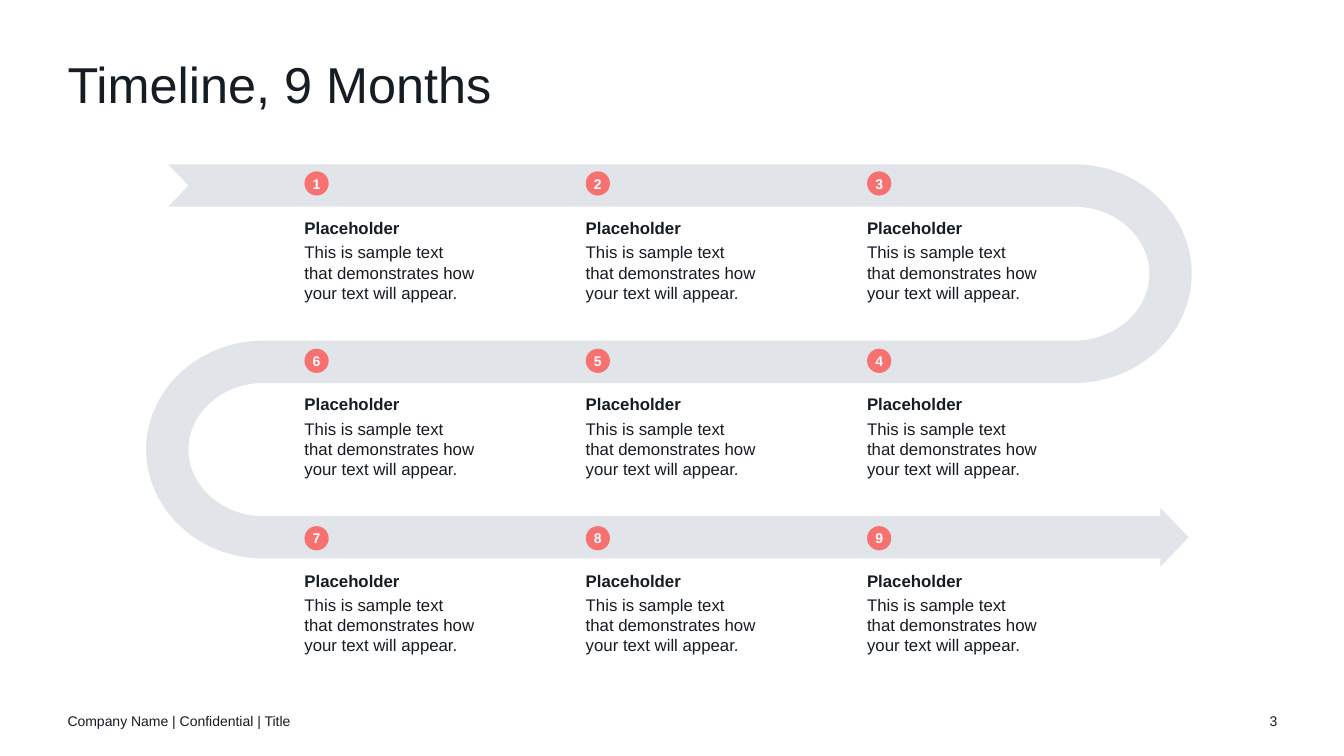
from pptx import Presentation
from pptx.dml.color import RGBColor
from pptx.enum.shapes import MSO_SHAPE as Shape
from pptx.enum.text import MSO_ANCHOR as Anchor, MSO_AUTO_SIZE as AutoSize, PP_ALIGN as Align
from pptx.oxml.ns import qn
from pptx.util import Inches, Pt

INK = RGBColor(0x15, 0x1C, 0x23)
ROAD = RGBColor(0xE1, 0xE4, 0xE9)
CORAL = RGBColor(0xF8, 0x71, 0x71)
WHITE = RGBColor(0xFF, 0xFF, 0xFF)

FONT = "Arial"
SAMPLE = "This is sample text that demonstrates how your text will appear."
ROWS = COLUMNS = 3
ROUND = 0.55


def place(box, left, top, width, height):
    box.left, box.top = Inches(left), Inches(top)
    box.width, box.height = Inches(width), Inches(height)


def prepare_frame(box, anchor=Anchor.TOP):
    frame = box.text_frame
    frame.word_wrap = True
    frame.vertical_anchor = anchor
    frame.margin_left = frame.margin_right = 0
    frame.margin_top = frame.margin_bottom = 0
    return frame


def write(para, text, size, color=INK, bold=False, align=Align.LEFT):
    para.text = text
    para.alignment = align
    font = para.runs[0].font
    font.name, font.size, font.bold = FONT, Pt(size), bold
    font.color.rgb = color


def set_title(page, text):
    title = page.shapes.title
    place(title, 0.67, 0.59, 12, 0.6)
    para = prepare_frame(title).paragraphs[0]
    write(para, text, 36)
    para.line_spacing = 0.9


def add_footer(page, text, left, width, align):
    box = page.shapes.add_textbox(Inches(left), Inches(6.95), Inches(width), Inches(0.4))
    write(prepare_frame(box, Anchor.MIDDLE).paragraphs[0], text, 10, align=align)


def turn(base, tip, start, end):
    middle = (start + end) / 2
    reach = base + (tip - base) * ROUND
    rise = (middle - start) * ROUND
    return [
        [(reach, start), (tip, middle - rise), (tip, middle)],
        [(tip, middle + rise), (reach, end), (base, end)],
    ]


def draw_outline(page, start, segments):
    builder = page.shapes.build_freeform(Inches(start[0]), Inches(start[1]))
    for segment in segments:
        builder.add_line_segments([(Inches(x), Inches(y)) for x, y in segment], close=False)
    builder.add_line_segments([], close=True)
    outline = builder.convert_to_shape()
    lines = iter(outline._element.findall(".//" + qn("a:lnTo")))
    for segment in segments:
        first, *others = [next(lines) for _ in segment]
        if others:
            first.tag = qn("a:cubicBezTo")
        for line in others:
            first.append(line[0])
            line.getparent().remove(line)
    return outline


def add_road(page):
    first, second, third = 1.84, 3.59, 5.33
    half, wing = 0.21, 0.29
    right, left = 10.65, 2.61
    neck, tip = 11.51, 11.79
    head = [(neck, third - half), (neck, third - wing), (tip, third),
            (neck, third + wing), (neck, third + half), (left, third + half)]
    segments = [
        [(right, first - half)],
        *turn(right, 11.82, first - half, second + half),
        [(left, second + half)],
        *turn(left, 1.87, second + half, third - half),
        *[[point] for point in head],
        *turn(left, 1.45, third + half, second - half),
        [(right, second - half)],
        *turn(right, 11.4, second - half, first + half),
        [(1.67, first + half)],
        [(1.87, first)],
    ]
    road = draw_outline(page, (1.67, first - half), segments)
    road.shadow.inherit = False
    road.fill.solid()
    road.fill.fore_color.rgb = ROAD
    road.line.fill.background()


def add_description(page, left, top):
    box = page.shapes.add_textbox(Inches(left), Inches(top), Inches(1.7), Inches(0.85))
    frame = prepare_frame(box)
    frame.auto_size = AutoSize.SHAPE_TO_FIT_TEXT
    write(frame.paragraphs[0], "Placeholder", 12, bold=True)
    write(frame.add_paragraph(), SAMPLE, 12)
    for para in frame.paragraphs:
        para.space_after = Pt(3)


def add_marker(page, number, left, top):
    marker = page.shapes.add_shape(
        Shape.OVAL, Inches(left), Inches(top), Inches(0.24), Inches(0.24))
    marker.shadow.inherit = False
    marker.fill.solid()
    marker.fill.fore_color.rgb = CORAL
    marker.line.fill.background()
    frame = prepare_frame(marker, Anchor.MIDDLE)
    write(frame.paragraphs[0], str(number), 10, WHITE, True, Align.CENTER)


def add_months(page):
    for month in range(ROWS * COLUMNS):
        row, step = divmod(month, COLUMNS)
        column = COLUMNS - 1 - step if row % 2 else step
        left = 3.02 + 2.79 * column
        add_description(page, left, 2.16 + 1.75 * row)
        add_marker(page, month + 1, left, 1.7 + 1.76 * row)


def main():
    deck = Presentation()
    deck.slide_width, deck.slide_height = Inches(13.33), Inches(7.5)
    page = deck.slides.add_slide(deck.slide_layouts[5])
    set_title(page, "Timeline, 9 Months")
    add_road(page)
    add_months(page)
    add_footer(page, "Company Name | Confidential | Title", 0.67, 4.5, Align.LEFT)
    add_footer(page, "3", 12.17, 0.5, Align.RIGHT)
    deck.save("out.pptx")


if __name__ == "__main__":
    main()
